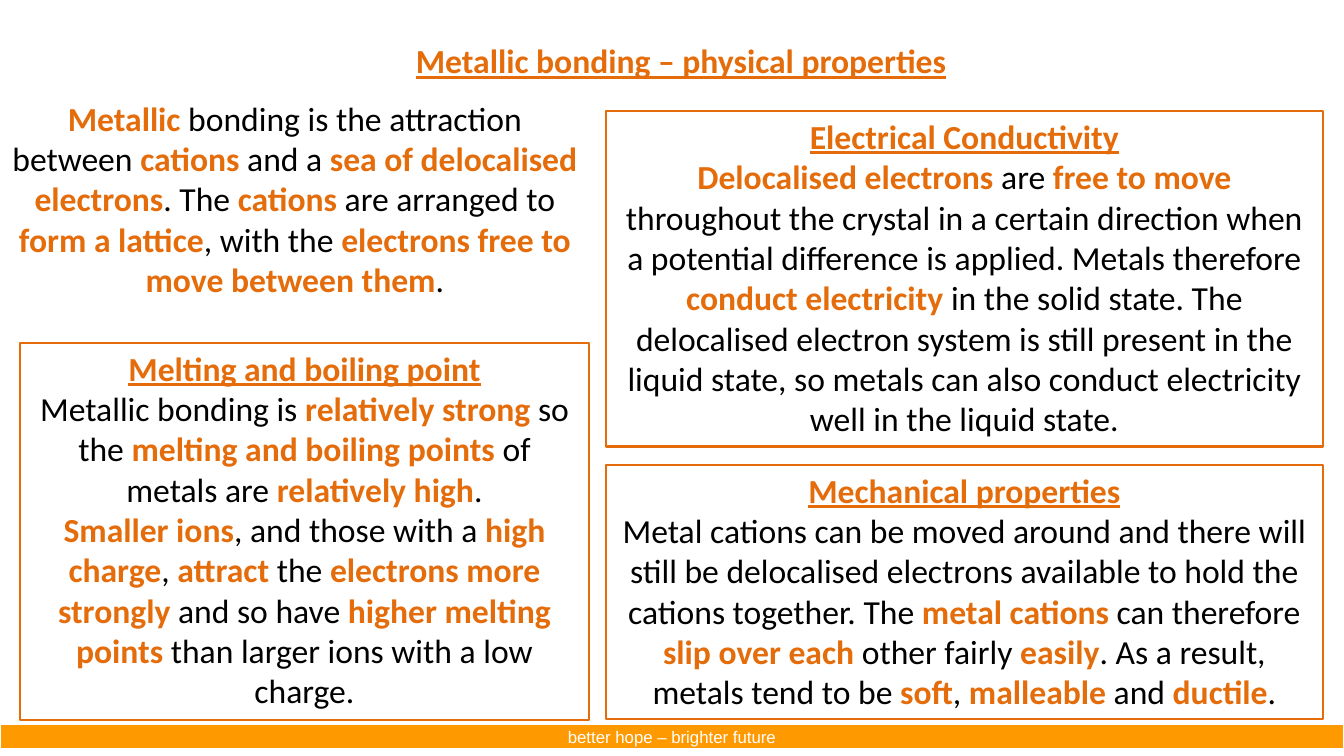
from dataclasses import dataclass

from pptx import Presentation
from pptx.dml.color import RGBColor
from pptx.enum.shapes import MSO_SHAPE as Preset
from pptx.enum.text import MSO_ANCHOR as Anchor, MSO_AUTO_SIZE as AutoSize, PP_ALIGN as Align
from pptx.shapes.autoshape import Shape
from pptx.slide import Slide
from pptx.text.text import TextFrame, _Paragraph as Paragraph
from pptx.util import Inches, Pt


@dataclass(frozen=True)
class Theme:
    accent: RGBColor = RGBColor(0xE4, 0x6C, 0x0A)
    body: RGBColor = RGBColor(0, 0, 0)
    white: RGBColor = RGBColor(0xFF, 0xFF, 0xFF)
    banner: RGBColor = RGBColor(0xFF, 0x99, 0x00)
    font: str = "Calibri"
    banner_font: str = "Arial"
    text_size: Pt = Pt(24)
    banner_size: Pt = Pt(12)
    border: Pt = Pt(1.5)


@dataclass(frozen=True)
class Box:
    left: float
    top: float
    width: float
    height: float


@dataclass(frozen=True)
class Panel:
    box: Box
    heading: str
    paragraphs: tuple[str, ...]


THEME = Theme()
SLIDE_WIDTH, SLIDE_HEIGHT = 13.33, 7.5
EMPHASIS = "*"
RIGHT_LEFT, RIGHT_WIDTH = 6.01, 7.11

TITLE = "Metallic bonding – physical properties"
TITLE_BOX = Box(0.18, 0.35, 13.15, 0.91)
BANNER = "better hope – brighter future"
BANNER_BOX = Box(0, 7.18, SLIDE_WIDTH, 0.25)
INTRO_BOX = Box(0.01, 0.92, 5.83, 2.12)
INTRO = (
    "*Metallic* bonding is the attraction between *cations* and a *sea of delocalised electrons*. "
    "The *cations* are arranged to *form a lattice*, with the "
    "*electrons free to move between them*."
)
PANELS = (
    Panel(
        Box(0.2, 3.4, 5.64, 3.74),
        "Melting and boiling point",
        (
            "Metallic bonding is *relatively strong *so the *melting and boiling points* of "
            "metals are *relatively high*.",
            "*Smaller ions*, and those with a *high charge*, *attract* the "
            "*electrons more strongly *and so have *higher melting points *"
            "than larger ions with a low charge.",
        ),
    ),
    Panel(
        Box(RIGHT_LEFT, 1.1, RIGHT_WIDTH, 3.33),
        "Electrical Conductivity",
        (
            "*Delocalised electrons* are *free to move *throughout the crystal in a certain "
            "direction when a potential difference is applied. Metals therefore "
            "*conduct electricity *in the solid state. The delocalised electron system is still "
            "present in the liquid state, so metals can also conduct electricity well in the "
            "liquid state.",
        ),
    ),
    Panel(
        Box(RIGHT_LEFT, 4.61, RIGHT_WIDTH, 2.52),
        "Mechanical properties",
        (
            "Metal cations can be moved around and there will still be delocalised electrons "
            "available to hold the cations together. The *metal cations *can therefore "
            "*slip over each *other fairly *easily*. As a result, metals tend to be "
            "*soft*, *malleable* and *ductile*.",
        ),
    ),
)


def bounds(box: Box) -> tuple[int, int, int, int]:
    return Inches(box.left), Inches(box.top), Inches(box.width), Inches(box.height)


def prepare(frame: TextFrame, anchor: Anchor = Anchor.TOP) -> Paragraph:
    frame.word_wrap = True
    frame.auto_size = AutoSize.NONE
    frame.vertical_anchor = anchor
    return frame.paragraphs[0]


def add_run(paragraph: Paragraph, text: str, strong: bool, underline: bool = False) -> None:
    run = paragraph.add_run()
    run.text = text
    font = run.font
    font.name = THEME.font
    font.size = THEME.text_size
    font.bold = strong
    font.underline = underline
    font.color.rgb = THEME.accent if strong else THEME.body


def write_heading(paragraph: Paragraph, text: str) -> None:
    paragraph.alignment = Align.CENTER
    add_run(paragraph, text, strong=True, underline=True)


def write_body(paragraph: Paragraph, marked_text: str) -> None:
    paragraph.alignment = Align.CENTER
    for index, text in enumerate(marked_text.split(EMPHASIS)):
        if text:
            add_run(paragraph, text, strong=index % 2 == 1)


def add_rectangle(slide: Slide, box: Box, line_color: RGBColor) -> Shape:
    shape = slide.shapes.add_shape(Preset.RECTANGLE, *bounds(box))
    shape.shadow.inherit = False
    shape.fill.background()
    shape.line.color.rgb = line_color
    shape.line.width = THEME.border
    return shape


def add_title(slide: Slide) -> None:
    title = slide.shapes.title
    title.left, title.top, title.width, title.height = bounds(TITLE_BOX)
    write_heading(prepare(title.text_frame), TITLE)


def add_banner(slide: Slide) -> None:
    shape = add_rectangle(slide, BANNER_BOX, THEME.white)
    shape.fill.solid()
    shape.fill.fore_color.rgb = THEME.banner
    paragraph = prepare(shape.text_frame, Anchor.MIDDLE)
    paragraph.alignment = Align.CENTER
    run = paragraph.add_run()
    run.text = BANNER
    run.font.name = THEME.banner_font
    run.font.size = THEME.banner_size
    run.font.color.rgb = THEME.white


def add_intro(slide: Slide) -> None:
    text_box = slide.shapes.add_textbox(*bounds(INTRO_BOX))
    write_body(prepare(text_box.text_frame), INTRO)


def add_panel(slide: Slide, panel: Panel) -> None:
    frame = add_rectangle(slide, panel.box, THEME.accent).text_frame
    write_heading(prepare(frame), panel.heading)
    for marked_text in panel.paragraphs:
        write_body(frame.add_paragraph(), marked_text)


def main() -> None:
    presentation = Presentation()
    presentation.slide_width = Inches(SLIDE_WIDTH)
    presentation.slide_height = Inches(SLIDE_HEIGHT)
    slide = presentation.slides.add_slide(presentation.slide_layouts.get_by_name("Title Only"))
    add_banner(slide)
    add_title(slide)
    add_intro(slide)
    for panel in PANELS:
        add_panel(slide, panel)
    presentation.save("out.pptx")


if __name__ == "__main__":
    main()
